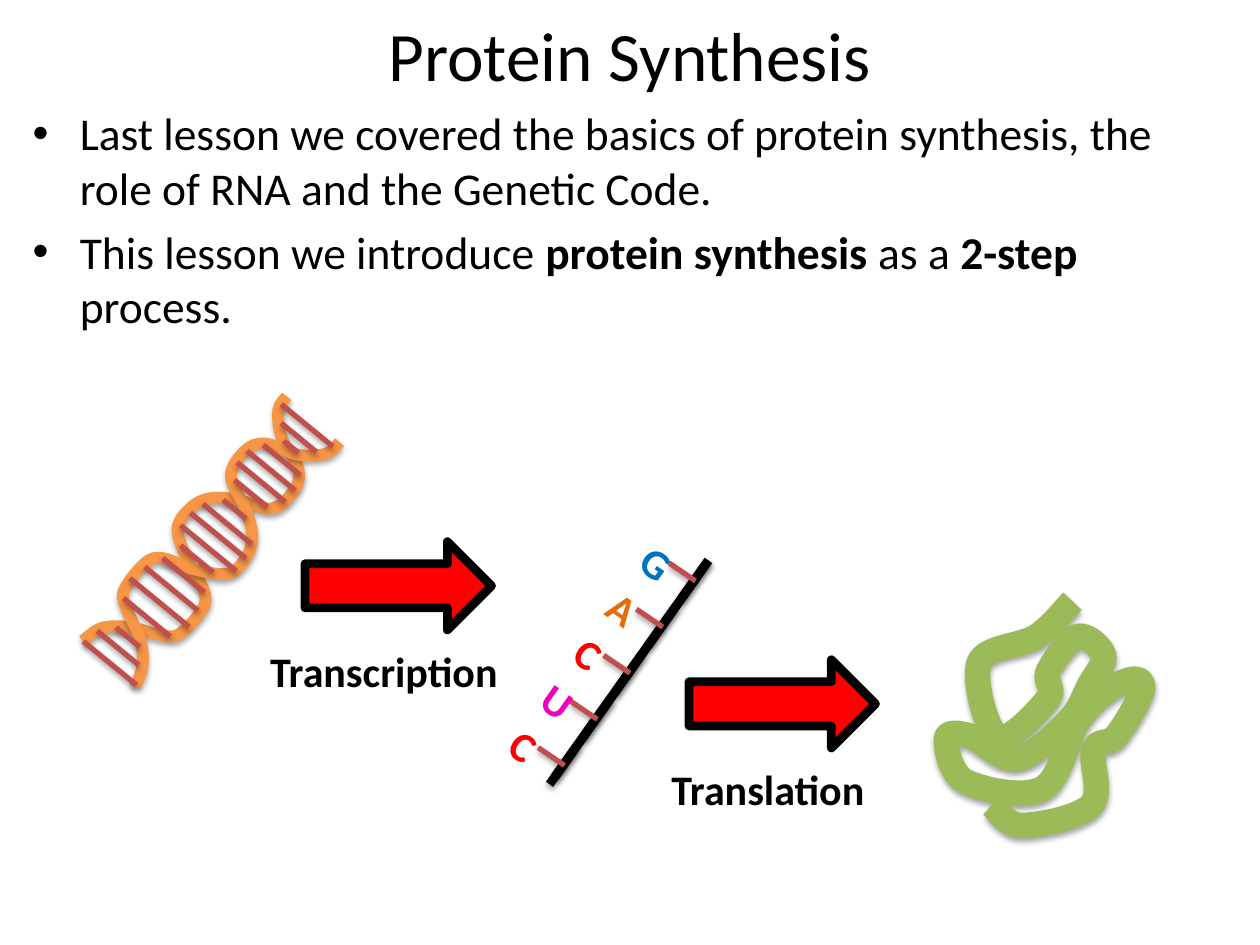
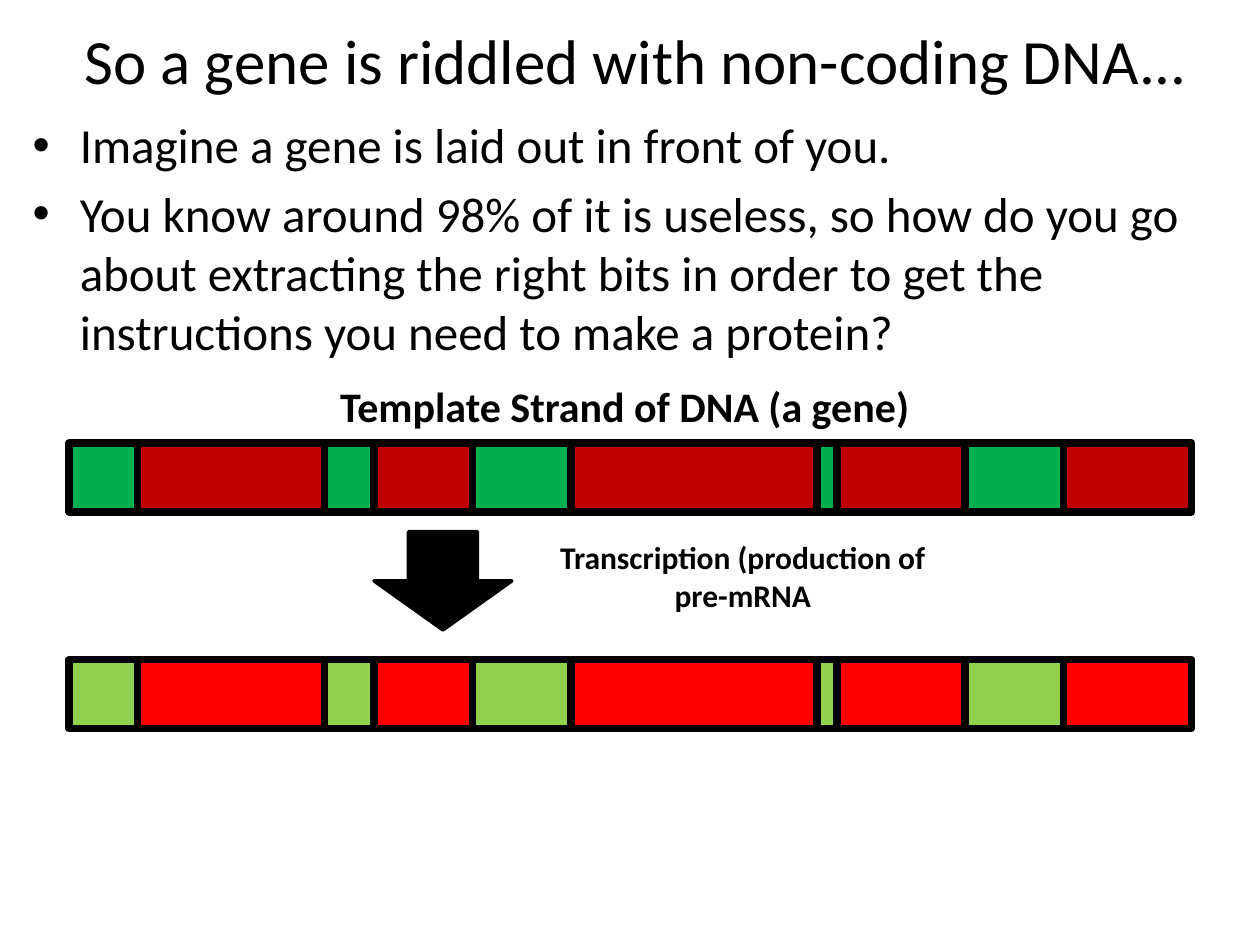
from itertools import accumulate, cycle
from math import cos, radians, sin

from lxml import etree
from pptx import Presentation
from pptx.dml.color import RGBColor
from pptx.enum.shapes import MSO_CONNECTOR, MSO_SHAPE
from pptx.enum.text import MSO_ANCHOR, MSO_AUTO_SIZE, PP_ALIGN
from pptx.oxml import parse_xml
from pptx.oxml.ns import nsdecls, qn
from pptx.util import Cm, Pt

STRAIGHT = MSO_CONNECTOR.STRAIGHT
RECTANGLE = MSO_SHAPE.RECTANGLE
RIGHT_ARROW, DOWN_ARROW = MSO_SHAPE.RIGHT_ARROW, MSO_SHAPE.DOWN_ARROW
TOP, MIDDLE = MSO_ANCHOR.TOP, MSO_ANCHOR.MIDDLE
LEFT, CENTER = PP_ALIGN.LEFT, PP_ALIGN.CENTER
FIXED, GROW = MSO_AUTO_SIZE.NONE, MSO_AUTO_SIZE.SHAPE_TO_FIT_TEXT

FONT = "Calibri"
BLACK = RGBColor(0x00, 0x00, 0x00)
RED = RGBColor(0xFF, 0x00, 0x00)
DARK_RED = RGBColor(0xC0, 0x00, 0x00)
GREEN = RGBColor(0x00, 0xB0, 0x50)
LIGHT_GREEN = RGBColor(0x92, 0xD0, 0x50)
STRAND_ORANGE = RGBColor(0xF7, 0x96, 0x46)
RUNG_RED = RGBColor(0xC0, 0x50, 0x4D)
PROTEIN_GREEN = RGBColor(0x9B, 0xBB, 0x59)
BLUE = RGBColor(0x00, 0x70, 0xC0)
ORANGE = RGBColor(0xE4, 0x6C, 0x0A)
PINK = RGBColor(0xEE, 0x00, 0xC1)

# All positions below are in centimetres, relative to the part they belong to
HELIX_TILT = 39.8
HELIX_CENTER = (2.57, 2.92)
HELIX_STRANDS = [
    [(4.11, 0), (3.94, 0.28), (4.01, 0.84), (4.34, 1.45), (4.27, 1.88), (3.81, 2.26),
     (3.1, 2.08), (2.54, 2.06), (2.16, 2.26), (1.91, 2.67), (2.11, 3.3), (2.44, 3.91),
     (2.41, 4.29), (1.93, 4.8), (1.52, 4.8), (0.94, 4.65), (0.38, 4.67), (0, 4.93)],
    [(5.16, 0.91), (4.9, 1.14), (4.34, 1.17), (3.66, 0.94), (3.25, 1.09), (2.97, 1.6),
     (3.28, 2.29), (3.4, 2.82), (3.28, 3.23), (2.92, 3.56), (2.24, 3.48), (1.6, 3.25),
     (1.24, 3.35), (0.81, 3.91), (0.89, 4.32), (1.14, 4.88), (1.19, 5.41), (1.04, 5.84)],
]
# Each rung: x, y, horizontal run
HELIX_RUNGS = [
    (3.99, 0.15, 1.04), (3.99, 0.53, 0.71), (4.04, 0.89, 0.3), (3.63, 0.97, 0.74),
    (3.3, 1.09, 0.97), (3.1, 1.32, 0.97), (3.05, 1.68, 0.66), (2.82, 2.08, 0.46),
    (2.41, 2.16, 0.99), (2.16, 2.34, 1.12), (1.96, 2.59, 1.12), (1.96, 3, 0.66),
    (1.6, 3.25, 0.84), (1.24, 3.43, 1.07), (0.94, 3.66, 1.19), (0.81, 4.06, 0.94),
    (0.66, 4.65, 0.48), (0.28, 4.72, 0.84), (0, 4.93, 1.07),
]
RUNG_SLOPE = 0.82
PROTEIN_CHAIN = [
    (2.57, 0), (1.85, 0.71), (0.69, 1.24), (1.07, 2.74), (2.08, 1.96), (2.08, 1.42),
    (2.67, 0.71), (3.2, 1.09), (2.92, 1.68), (2.49, 2.41), (1.45, 3.18), (0.51, 2.72),
    (0.03, 2.77), (0.41, 3.63), (1.96, 3.78), (2.69, 2.41), (3.28, 1.8), (3.84, 1.57),
    (3.96, 1.85), (3.45, 2.72), (3, 3), (2.95, 4.11), (1.55, 4.52), (0.94, 4.11),
]
RNA_BASES = [("G", BLUE), ("A", ORANGE), ("C", RED), ("U", PINK), ("C", RED)]
GENE_WIDTHS = [1.38, 3.77, 1, 1.99, 1.98, 4.96, 0.4, 2.58, 1.99, 2.58]


def add_runs(para, runs, size, color=BLACK):
    for text, bold in runs:
        span = para.add_run()
        span.text = text
        span.font.name, span.font.size = FONT, Pt(size)
        span.font.bold, span.font.color.rgb = bold, color


def add_text(shapes, box, runs, size, color=BLACK, align=CENTER, anchor=TOP, fit=GROW):
    text_box = shapes.add_textbox(*map(Cm, box))
    frame = text_box.text_frame
    frame.word_wrap, frame.auto_size, frame.vertical_anchor = True, fit, anchor
    frame.paragraphs[0].alignment = align
    add_runs(frame.paragraphs[0], runs, size, color)
    return text_box


def add_title(page, box, text, size):
    add_text(page.shapes, box, [(text, False)], size, anchor=MIDDLE, fit=FIXED)


def add_bullets(page, box, items, size):
    frame = page.shapes.add_textbox(*map(Cm, box)).text_frame
    frame.word_wrap = True
    for index, runs in enumerate(items):
        para = frame.add_paragraph() if index else frame.paragraphs[0]
        properties = para._p.get_or_add_pPr()
        properties.set("marL", str(Cm(0.95)))
        properties.set("indent", str(-Cm(0.95)))
        etree.SubElement(properties, qn("a:buFont")).set("typeface", "Arial")
        etree.SubElement(properties, qn("a:buChar")).set("char", "•")
        if index:
            para.space_before = Pt(size * 0.2)
        add_runs(para, runs, size)


def add_block(page, kind, box, fill, line_width):
    block = page.shapes.add_shape(kind, *map(Cm, box))
    block.shadow.inherit = False
    block.fill.solid()
    block.fill.fore_color.rgb = fill
    block.line.color.rgb, block.line.width = BLACK, Pt(line_width)


def draw_stroke(shape, color, width):
    """Colour a line and give it a soft shadow below."""
    shape.line.color.rgb, shape.line.width = color, Pt(width)
    shape._element.spPr.append(parse_xml(
        f'<a:effectLst {nsdecls("a")}><a:outerShdw blurRad="40000" dist="23000" '
        'dir="5400000" rotWithShape="0"><a:srgbClr val="000000">'
        '<a:alpha val="35000"/></a:srgbClr></a:outerShdw></a:effectLst>'))


def add_line(shapes, x, y, dx, dy, color, width):
    line = shapes.add_connector(STRAIGHT, Cm(x), Cm(y), Cm(x + dx), Cm(y + dy))
    draw_stroke(line, color, width)


def turn(points, center, degrees):
    """Rotate points clockwise about a center."""
    cosine, sine = cos(radians(degrees)), sin(radians(degrees))
    offsets = [(x - center[0], y - center[1]) for x, y in points]
    return [(center[0] + x * cosine - y * sine, center[1] + x * sine + y * cosine)
            for x, y in offsets]


def smooth_segments(shape):
    """Turn each straight segment into a Bezier curve with Catmull-Rom tangents."""
    points = [(int(point.get("x")), int(point.get("y")))
              for point in shape._element.iter(qn("a:pt"))]
    padded = [points[0], *points, points[-1]]
    segments = list(shape._element.iter(qn("a:lnTo")))
    for segment, a, b, c, d in zip(segments, padded, padded[1:], padded[2:], padded[3:]):
        segment.tag = qn("a:cubicBezTo")
        controls = [[q + (r - p) / 6 for p, q, r in zip(a, b, c)],
                    [r - (s - q) / 6 for q, r, s in zip(b, c, d)]]
        for index, (x, y) in enumerate(controls):
            point = etree.Element(qn("a:pt"), x=str(round(x)), y=str(round(y)))
            segment.insert(index, point)


def add_curve(shapes, left, top, points, color, width, tilt=0):
    start, *rest = [(Cm(left + x), Cm(top + y)) for x, y in points]
    builder = shapes.build_freeform(*start)
    builder.add_line_segments(rest, close=False)
    curve = builder.convert_to_shape()
    smooth_segments(curve)
    curve.rotation = tilt
    curve.fill.background()
    draw_stroke(curve, color, width)


def add_dna(page, left, top):
    shapes = page.shapes.add_group_shape().shapes
    for strand in HELIX_STRANDS:
        upright = turn(strand, HELIX_CENTER, -HELIX_TILT)
        add_curve(shapes, left, top, upright, STRAND_ORANGE, 6.75, HELIX_TILT)
    for x, y, run in HELIX_RUNGS:
        add_line(shapes, left + x, top + y, run, run * RUNG_SLOPE, RUNG_RED, 3)


def add_rna(page, right, top):
    shapes = page.shapes.add_group_shape().shapes
    add_line(shapes, right, top, -3.1, 4.37, BLACK, 5.25)
    for index, (letter, color) in enumerate(RNA_BASES):
        x, y = right - 0.66 * index, top + 0.93 * index
        add_line(shapes, x, y, -0.56, 0.79, BLACK, 5)
        add_line(shapes, x - 0.79, y + 0.05, 0.53, 0.36, RUNG_RED, 3)
        base = add_text(shapes, (x - 1.47, y - 0.66, 0.76, 1.04), [(letter, True)],
                        24, color, LEFT)
        base.rotation = 35.4


def add_step(page, left, top, label):
    """Red arrow with the name of the step below it."""
    add_block(page, RIGHT_ARROW, (left + 0.99, top, 3.76, 1.78), RED, 5)
    add_text(page.shapes, (left, top + 1.97, 5.16, 1.27), [(label, True)], 24)


def add_gene(page, left, top, coding, non_coding):
    starts = accumulate(GENE_WIDTHS, initial=left)
    for x, width, fill in zip(starts, GENE_WIDTHS, cycle((coding, non_coding))):
        add_block(page, RECTANGLE, (x, top, width, 1.39), fill, 4.25)


def build_synthesis(page):
    add_title(page, (1.27, 0.58, 22.86, 1), "Protein Synthesis", 39.6)
    add_bullets(page, (0.41, 2, 24.6, 16.66), [
        [("Last lesson we covered the basics of protein synthesis, the role of RNA "
          "and the Genetic Code.", False)],
        [("This lesson we introduce ", False), ("protein synthesis", True),
         (" as a ", False), ("2-step", True), (" process.", False)],
    ], 26)
    add_dna(page, 1.68, 8)
    add_rna(page, 14.28, 11.3)
    add_curve(page.shapes, 19.05, 12.12, PROTEIN_CHAIN, PROTEIN_GREEN, 14.5)
    add_step(page, 5.16, 10.92, "Transcription")
    add_step(page, 12.9, 13.3, "Translation")


def build_gene(page):
    add_title(page, (1.39, 0.6, 22.86, 1.2), "So a gene is riddled with non-coding DNA...", 36)
    add_bullets(page, (0.41, 2.19, 24.6, 16.46), [
        [("Imagine a gene is laid out in front of you.", False)],
        [("You know around 98% of it is useless, so how do you go about extracting the "
          "right bits in order to get the instructions you need to make a protein?", False)],
    ], 28)
    add_gene(page, 1.39, 8.93, GREEN, DARK_RED)
    add_text(page.shapes, (5.75, 7.54, 13.69, 1.27),
             [("Template Strand of DNA (a gene)", True)], 24)
    add_block(page, DOWN_ARROW, (7.54, 10.72, 2.78, 1.98), BLACK, 2)
    add_text(page.shapes, (10.91, 10.72, 8.13, 1.8),
             [("Transcription (production of pre-mRNA", True)], 18)
    add_gene(page, 1.39, 13.3, LIGHT_GREEN, RED)


def main():
    deck = Presentation()
    deck.slide_width, deck.slide_height = Cm(25.4), Cm(19.05)
    for build in (build_synthesis, build_gene):
        build(deck.slides.add_slide(deck.slide_layouts[6]))
    deck.save("out.pptx")


if __name__ == "__main__":
    main()
